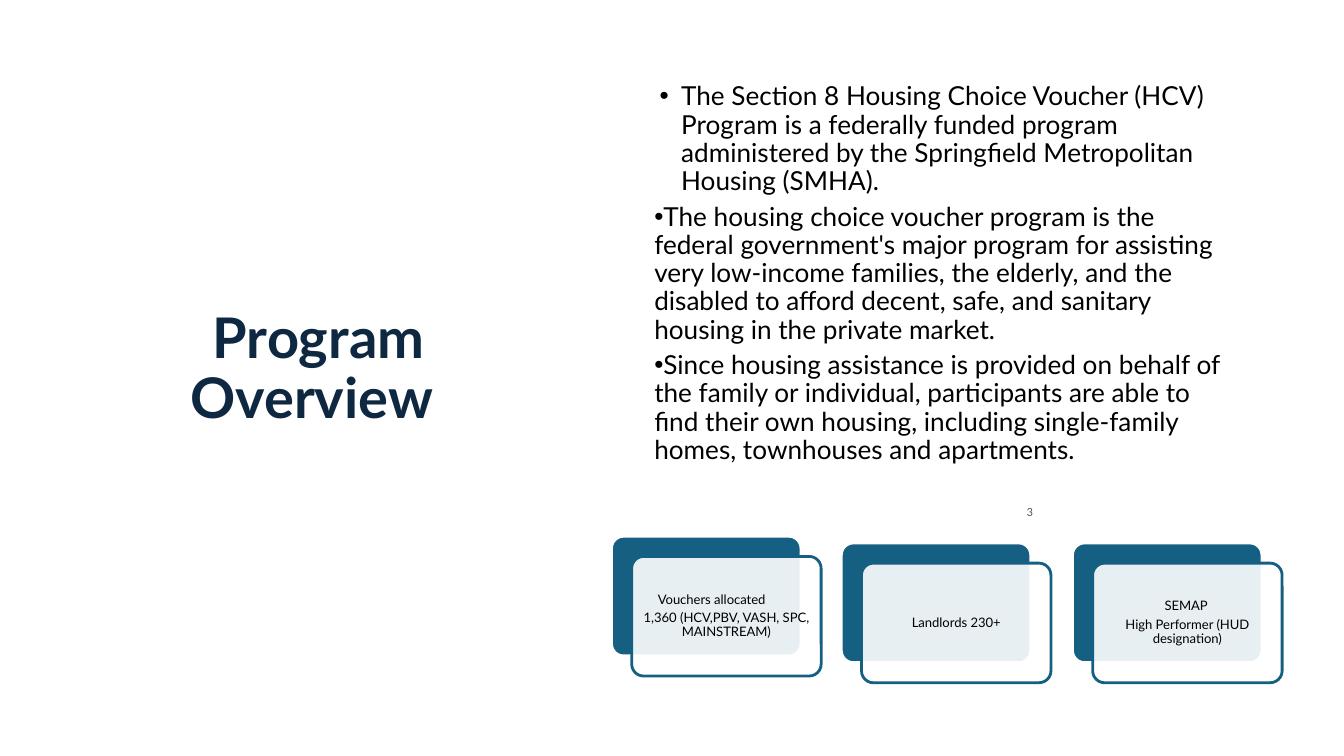
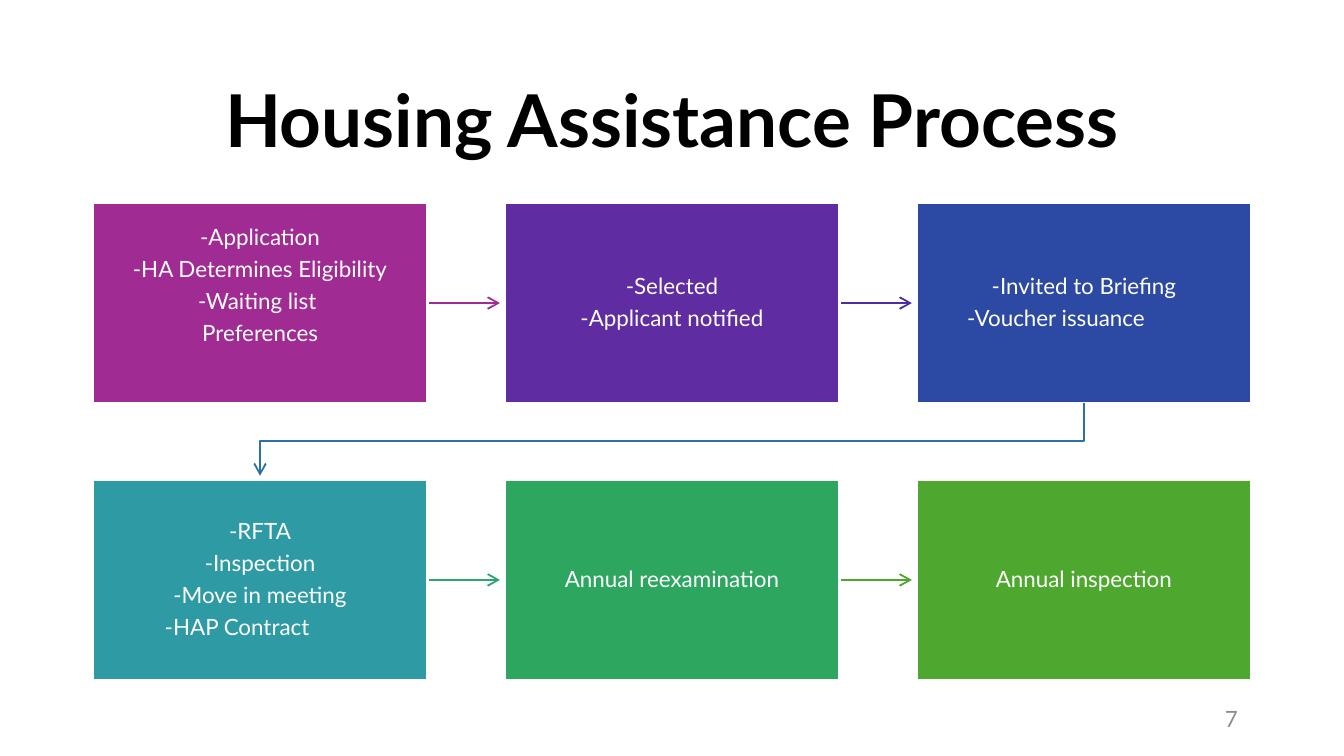
import pptx
import pptx.util
import pptx.dml.color
import pptx.enum.shapes
import pptx.enum.text
import pptx.oxml
import pptx.oxml.ns
import lxml.etree

Inches = pptx.util.Inches
Pt = pptx.util.Pt
RGB = pptx.dml.color.RGBColor.from_string
SHAPE = pptx.enum.shapes.MSO_SHAPE
ALIGN = pptx.enum.text.PP_ALIGN
ANCHOR = pptx.enum.text.MSO_ANCHOR
qn = pptx.oxml.ns.qn

COLORS = {
    "white": "FFFFFF", "black": "000000", "navy": "0E2841", "teal": "156082",
    "dark_gray": "555555", "gray": "8C8C8C",
    "magenta": "A02B93", "purple": "5F2CA1", "blue": "2C49A3",
    "cyan": "2D9AA4", "green": "2DA65F", "lime": "4EA72E",
    "indigo_line": "4B2CA2", "blue_line": "2C71A4", "green_line": "2DA573",
}


def write(sp, text, size, color="black", bold=False, font="Lato", align=ALIGN.CENTER,
          anchor=ANCHOR.MIDDLE, spacing=0.9, after=6, insets=(0.1, 0.05, 0.1, 0.05),
          bullets=None, tab=1):
    tf = sp.text_frame
    tf.word_wrap = True
    tf.auto_size = pptx.enum.text.MSO_AUTO_SIZE.NONE
    tf.vertical_anchor = anchor
    tf.margin_left, tf.margin_top, tf.margin_right, tf.margin_bottom = map(Inches, insets)
    for i, line in enumerate(text.split("\n")):
        p = tf.paragraphs[0] if i == 0 else tf.add_paragraph()
        p.alignment = align
        p.line_spacing = spacing
        p.space_before = Pt(0)
        p.space_after = Pt(after)
        pPr = p._p.get_or_add_pPr()
        pPr.set("defTabSz", str(Inches(tab)))
        if bullets:
            pPr.set("marL", str(Inches(bullets[i])))
            pPr.set("indent", str(Inches(-0.16)))
            lxml.etree.SubElement(pPr, qn("a:buFont"), typeface="Arial")
            lxml.etree.SubElement(pPr, qn("a:buChar"), char="•")
        r = p.add_run()
        r.text = line
        r.font.name = font
        r.font.size = Pt(size)
        r.font.bold = bold
        r.font.color.rgb = RGB(COLORS[color])


def make_arrow(sp, color):
    sp.line.color.rgb = RGB(COLORS[color])
    sp.line.width = Pt(1)
    spPr = sp._element.spPr
    lxml.etree.SubElement(spPr.find(qn("a:ln")), qn("a:tailEnd"), type="arrow")
    lxml.etree.SubElement(spPr, qn("a:effectLst"))


prs = pptx.Presentation()
prs.slide_width = Inches(10)
prs.slide_height = prs.slide_width * 9 // 16

slides = []
for title, box, size, color in [
    (" Program Overview", (0.82, 1.6, 3, 2.31), 30, "navy"),
    ("Housing Assistance Process", (0.69, 0.46, 8.62, 0.93), 39, "black"),
]:
    s = prs.slides.add_slide(prs.slide_layouts[5])
    sp = s.shapes.title
    sp.left, sp.top, sp.width, sp.height = map(Inches, box)
    write(sp, title, size, color=color, bold=True)
    slides.append(s)
overview, process = slides

sp = overview.shapes.add_textbox(Inches(4.77), Inches(0.57), Inches(4.54), Inches(3.18))
write(sp,
      "The Section 8 Housing Choice Voucher (HCV) Program is a federally funded program "
      "administered by the Springfield Metropolitan Housing (SMHA).\n"
      "The housing choice voucher program is the federal government's major program for "
      "assisting very low-income families, the elderly, and the disabled to afford decent, "
      "safe, and sanitary housing in the private market.\n"
      "Since housing assistance is provided on behalf of the family or individual, "
      "participants are able to find their own housing, including single-family homes, "
      "townhouses and apartments.",
      14, align=ALIGN.LEFT, anchor=ANCHOR.TOP, after=3.9, bullets=(0.2, 0, 0))

sp = overview.shapes.add_textbox(Inches(7.54), Inches(3.72), Inches(1.48), Inches(0.2))
write(sp, "3", 6.7, color="dark_gray", font="Calibri", align=ALIGN.LEFT, spacing=0.7, after=3.9)

cards = [
    (4.55, 3.99, "Vouchers allocated\t\n1,360 (HCV,PBV, VASH, SPC, MAINSTREAM)"),
    (6.26, 4.04, "Landlords 230+"),
    (7.98, 4.04, "SEMAP\t\nHigh Performer (HUD designation)"),
]
for x, y, text in cards:
    for offset, fill, line in [(0, "teal", "white"), (0.15, "white", "teal")]:
        sp = overview.shapes.add_shape(SHAPE.ROUNDED_RECTANGLE, Inches(x + offset),
                                       Inches(y + offset), Inches(1.41), Inches(0.89))
        sp.adjustments[0] = 0.1
        sp.shadow.inherit = False
        sp.fill.solid()
        sp.fill.fore_color.rgb = RGB(COLORS[fill])
        sp.line.color.rgb = RGB(COLORS[line])
        sp.line.width = Pt(1.5)
    rgb = sp._element.spPr.find(qn("a:solidFill")).find(qn("a:srgbClr"))
    lxml.etree.SubElement(rgb, qn("a:alpha"), val="90000")
    write(sp, text, 7, after=2.45, insets=(0.03, 0.03, 0.03, 0.03), tab=0.34)

sp = process.shapes.add_textbox(Inches(7.06), Inches(5.21), Inches(2.25), Inches(0.3))
write(sp, "7", 12, color="gray", align=ALIGN.RIGHT)

left, top, step_w, step_h = 0.69, 1.51, 2.49, 1.49
pitch_x, pitch_y = (8.62 - step_w) / 2, 2.06
steps = [
    ("-Application\n-HA Determines Eligibility\n-Waiting list \nPreferences",
     "magenta", "magenta", 0.38, 0.58),
    ("-Selected\n-Applicant notified", "purple", "indigo_line", 0.13, 0.58),
    ("-Invited to Briefing\n-Voucher issuance\t", "blue", None, 0.13, 0.58),
    ("-RFTA\n-Inspection\n-Move in meeting\n-HAP Contract\t", "cyan", "green_line", 0.13, 0.71),
    ("Annual reexamination", "green", "lime", 0.13, 0.58),
    ("Annual inspection", "lime", None, 0.13, 0.58),
]
for i, (text, fill, arrow, bottom, tab) in enumerate(steps):
    x = left + i % 3 * pitch_x
    y = top + i // 3 * pitch_y
    if arrow:
        mid = Inches(y + step_h / 2)
        sp = process.shapes.add_connector(pptx.enum.shapes.MSO_CONNECTOR.STRAIGHT,
                                          Inches(x + step_w), mid,
                                          Inches(x + step_w + 0.54), mid)
        make_arrow(sp, arrow)
    sp = process.shapes.add_shape(SHAPE.RECTANGLE, Inches(x), Inches(y),
                                  Inches(step_w), Inches(step_h))
    sp.shadow.inherit = False
    sp.fill.solid()
    sp.fill.fore_color.rgb = RGB(COLORS[fill])
    sp.line.color.rgb = RGB(COLORS["white"])
    sp.line.width = Pt(1.5)
    write(sp, text, 12, color="white", after=4.2, insets=(0.12, 0.13, 0.12, bottom), tab=tab)

first_x = left + step_w / 2
last_x = first_x + 2 * pitch_x
fb = process.shapes.build_freeform(Inches(last_x), Inches(3), scale=1.0)
fb.add_line_segments([(Inches(x), Inches(y)) for x, y in
                      [(last_x, 3.28), (first_x, 3.28), (first_x, 3.54)]], close=False)
sp = fb.convert_to_shape()
sp.fill.background()
make_arrow(sp, "blue_line")

prs.save("out.pptx")
